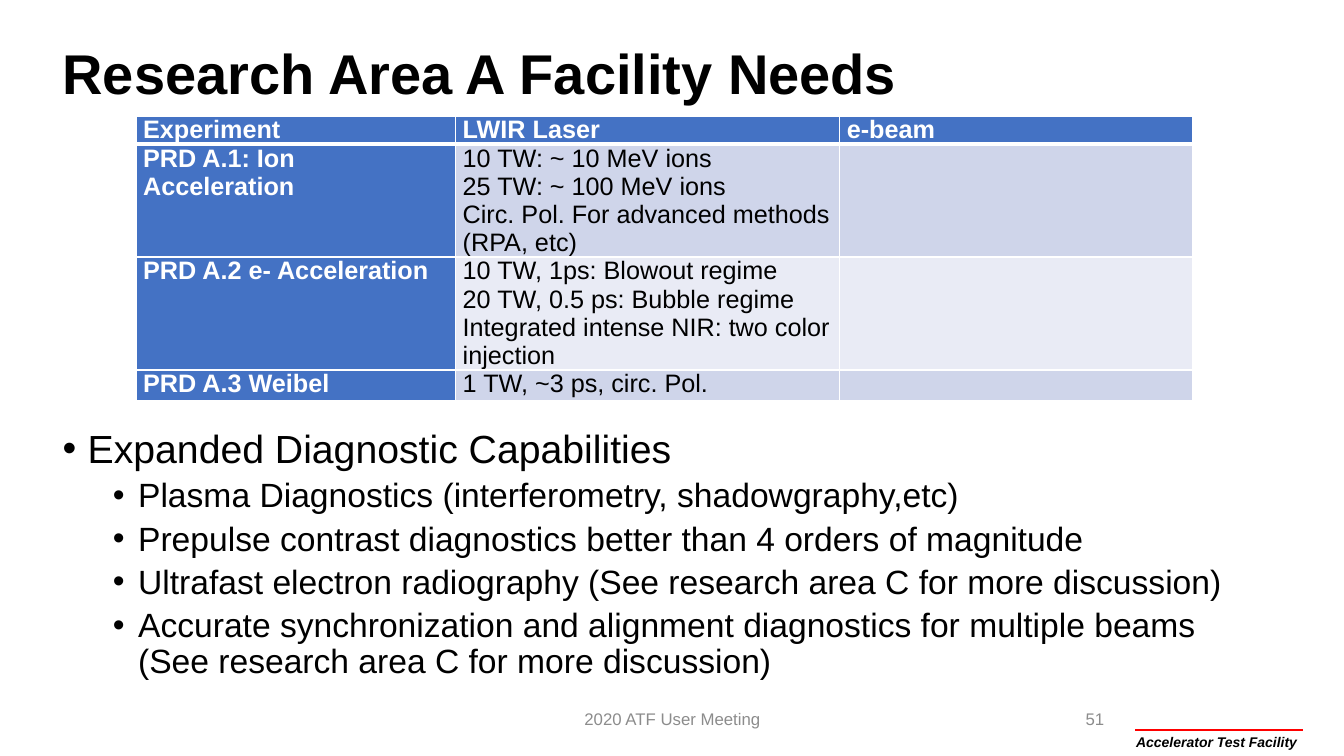
from dataclasses import dataclass

from lxml import etree
from pptx import Presentation
from pptx.dml.color import RGBColor
from pptx.enum.shapes import MSO_CONNECTOR
from pptx.enum.text import MSO_ANCHOR, MSO_AUTO_SIZE, PP_ALIGN
from pptx.oxml.ns import qn
from pptx.util import Inches, Pt

LEFT, CENTER = PP_ALIGN.LEFT, PP_ALIGN.CENTER
TOP, MIDDLE = MSO_ANCHOR.TOP, MSO_ANCHOR.MIDDLE
NO_AUTOFIT = MSO_AUTO_SIZE.NONE
STRAIGHT = MSO_CONNECTOR.STRAIGHT


@dataclass(frozen=True)
class Theme:
    font: str = "Arial"
    black: str = "000000"
    white: str = "FFFFFF"
    grey: str = "8C8C8C"
    red: str = "FF0000"
    blue: str = "4472C4"
    bands: tuple[str, str] = ("CFD5EA", "E9EBF5")
    title_size: int = 40
    topic_size: int = 28
    detail_size: int = 24
    table_size: int = 18
    footer_size: int = 12
    mark_size: int = 10


@dataclass(frozen=True)
class Experiment:
    name: str
    laser_needs: tuple[str, ...]


@dataclass(frozen=True)
class Bullet:
    text: str
    level: int = 1


@dataclass(frozen=True)
class Label:
    text: str
    box: tuple[float, float, float, float]
    size: int
    color: str
    align: PP_ALIGN = CENTER
    anchor: MSO_ANCHOR = MIDDLE
    emphasis: bool = False
    wrap: bool = True


THEME = Theme()
HEADINGS = ("Experiment", "LWIR Laser", "e-beam")
EXPERIMENTS = (
    Experiment("PRD A.1: Ion Acceleration", (
        "10 TW: ~ 10 MeV ions", "25 TW: ~ 100 MeV ions",
        "Circ. Pol. For advanced methods (RPA, etc)")),
    Experiment("PRD A.2 e- Acceleration", (
        "10 TW, 1ps: Blowout regime", "20 TW, 0.5 ps: Bubble regime",
        "Integrated intense NIR: two color injection")),
    Experiment("PRD A.3 Weibel", ("1 TW, ~3 ps, circ. Pol.",)),
)
COLUMN_WIDTHS = (3.17, 3.81, 3.5)
ROW_HEIGHTS = (0.28, 1.12, 1.12, 0.28)
DIAGNOSTICS = (
    Bullet("Expanded Diagnostic Capabilities", level=0),
    Bullet("Plasma Diagnostics (interferometry, shadowgraphy,etc)"),
    Bullet("Prepulse contrast diagnostics better than 4 orders of magnitude"),
    Bullet("Ultrafast electron radiography (See research area C for more discussion)"),
    Bullet("Accurate synchronization and alignment diagnostics for multiple beams "
           "(See research area C for more discussion)"),
)
LABELS = (
    Label("Accelerator Test Facility", (11.17, 7.23, 1.81, 0.27), THEME.mark_size,
          THEME.black, LEFT, TOP, emphasis=True, wrap=False),
    Label("51", (10.47, 6.93, 0.78, 0.4), THEME.footer_size, THEME.grey),
    Label("2020 ATF User Meeting", (3.17, 6.93, 7, 0.4), THEME.footer_size, THEME.grey),
)


def write(paragraph, text: str, *, size: int, color: str = THEME.black,
          bold: bool = False, italic: bool = False, align: PP_ALIGN = LEFT,
          line_spacing: float = 1.0, before: float = 0) -> None:
    paragraph.alignment = align
    paragraph.line_spacing = line_spacing
    paragraph.space_before = Pt(before)
    run = paragraph.add_run()
    run.text = text
    font = run.font
    font.name, font.size, font.bold, font.italic = THEME.font, Pt(size), bold, italic
    font.color.rgb = RGBColor.from_string(color)


def paragraph_at(frame, index: int):
    return frame.paragraphs[0] if index == 0 else frame.add_paragraph()


def place(shape, left: float, top: float, width: float, height: float,
          anchor: MSO_ANCHOR) -> None:
    shape.left, shape.top = Inches(left), Inches(top)
    shape.width, shape.height = Inches(width), Inches(height)
    frame = shape.text_frame
    frame.word_wrap = True
    frame.auto_size = NO_AUTOFIT
    frame.vertical_anchor = anchor


def add_label(slide, label: Label) -> None:
    box = slide.shapes.add_textbox(*map(Inches, label.box))
    box.text_frame.word_wrap = label.wrap
    box.text_frame.vertical_anchor = label.anchor
    write(box.text_frame.paragraphs[0], label.text, size=label.size, color=label.color,
          bold=label.emphasis, italic=label.emphasis, align=label.align)


def add_rule(slide) -> None:
    rule = slide.shapes.add_connector(
        STRAIGHT, Inches(11.26), Inches(7.24), Inches(12.92), Inches(7.24))
    rule.line.color.rgb = RGBColor.from_string(THEME.red)
    rule.line.width = Pt(1.5)
    etree.SubElement(rule._element.spPr, qn("a:effectLst"))


def set_borders(cell, row: int) -> None:
    # The line below the heading row is the heavy one
    widths = {"lnL": 1, "lnR": 1, "lnT": 3 if row == 1 else 1, "lnB": 3 if row == 0 else 1}
    properties = cell._tc.get_or_add_tcPr()
    for side, width in widths.items():
        border = etree.SubElement(properties, qn(f"a:{side}"), w=str(Pt(width)))
        fill = etree.SubElement(border, qn("a:solidFill"))
        etree.SubElement(fill, qn("a:srgbClr"), val=THEME.white)


def fill_cell(cell, lines: tuple[str, ...], row: int, column: int) -> None:
    heading = row == 0 or column == 0
    cell.margin_left = cell.margin_right = Inches(0.07)
    cell.margin_top = cell.margin_bottom = 0
    set_borders(cell, row)
    cell.fill.solid()
    cell.fill.fore_color.rgb = RGBColor.from_string(
        THEME.blue if heading else THEME.bands[(row - 1) % 2])
    for index, line in enumerate(lines):
        write(paragraph_at(cell.text_frame, index), line, size=THEME.table_size,
              color=THEME.white if heading else THEME.black, bold=heading)


def add_needs_table(slide) -> None:
    rows = [[(heading,) for heading in HEADINGS]]
    rows += [[(item.name,), item.laser_needs, ()] for item in EXPERIMENTS]
    table = slide.shapes.add_table(
        len(rows), len(HEADINGS), Inches(1.35), Inches(1.15),
        Inches(sum(COLUMN_WIDTHS)), Inches(sum(ROW_HEIGHTS))).table
    table.first_col = True
    for column, width in zip(table.columns, COLUMN_WIDTHS):
        column.width = Inches(width)
    for row, height in zip(table.rows, ROW_HEIGHTS):
        row.height = Inches(height)
    for row, cells in enumerate(rows):
        for column, lines in enumerate(cells):
            fill_cell(table.cell(row, column), lines, row, column)


def add_diagnostics(body) -> None:
    place(body, 0.52, 4.21, 12.14, 2.71, TOP)
    for index, bullet in enumerate(DIAGNOSTICS):
        paragraph = paragraph_at(body.text_frame, index)
        paragraph.level = bullet.level
        properties = paragraph._p.get_or_add_pPr()
        properties.set("marL", str(Inches(0.25 + 0.5 * bullet.level)))
        properties.set("indent", str(Inches(-0.25)))
        etree.SubElement(properties, qn("a:buFont"), typeface=THEME.font)
        etree.SubElement(properties, qn("a:buChar"), char="•")
        write(paragraph, bullet.text, line_spacing=0.9, before=5 if index else 0,
              size=THEME.detail_size if bullet.level else THEME.topic_size)


def main() -> None:
    deck = Presentation()
    deck.slide_width, deck.slide_height = Inches(13.33), Inches(7.5)
    slide = deck.slides.add_slide(deck.slide_layouts[1])

    # Title
    title = slide.shapes.title
    place(title, 0.52, 0.4, 12.14, 0.71, MIDDLE)
    write(title.text_frame.paragraphs[0], "Research Area A Facility Needs",
          size=THEME.title_size, bold=True, line_spacing=0.9)

    # Facility needs and diagnostics
    add_needs_table(slide)
    add_diagnostics(slide.placeholders[1])

    # Footer
    add_rule(slide)
    for label in LABELS:
        add_label(slide, label)

    deck.save("out.pptx")


if __name__ == "__main__":
    main()
